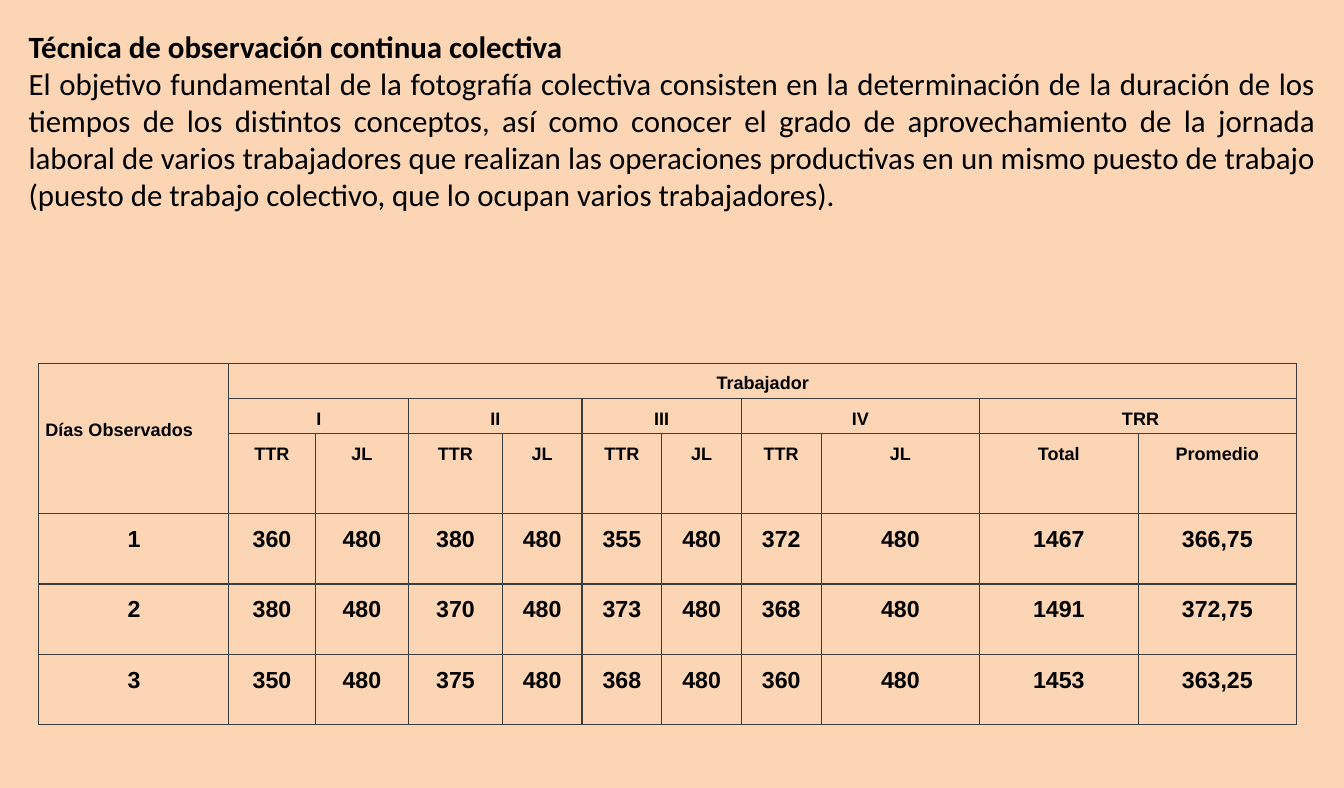
from dataclasses import dataclass

from lxml import etree
from pptx import Presentation
from pptx.dml.color import RGBColor
from pptx.enum.text import PP_ALIGN
from pptx.oxml.ns import qn
from pptx.util import Inches, Pt

CENTER, JUSTIFY = PP_ALIGN.CENTER, PP_ALIGN.JUSTIFY


@dataclass(frozen=True)
class Theme:
    background: RGBColor = RGBColor(0xFC, 0xD5, 0xB5)
    text: RGBColor = RGBColor(0, 0, 0)
    border: str = "3C3C3C"
    border_width: int = Pt(1)
    body_font: str = "Calibri"
    table_font: str = "Arial"
    body_size: int = 24
    header_size: int = 14
    value_size: int = 18


THEME = Theme()

TITLE = "Técnica de observación continua colectiva"
BODY = (
    "El objetivo fundamental de la fotografía colectiva consisten en la determinación "
    "de la duración de los tiempos de los distintos conceptos, así como conocer el grado "
    "de aprovechamiento de la jornada laboral de varios trabajadores que realizan las "
    "operaciones productivas en un mismo puesto de trabajo (puesto de trabajo colectivo, "
    "que lo ocupan varios trabajadores)."
)

COLUMN_WIDTHS = [2.05, 0.93, 1.01, 1.01] + [0.86] * 4 + [1.71] * 3
ROW_HEIGHTS = [0.38, 0.38, 0.86] + [0.76] * 3
GROUPS = ["I", "II", "III", "IV", " TRR"]
MEASURES = ["TTR", "JL"] * 4 + ["Total", "Promedio"]
DAYS = [
    ["1", "360", "480", "380", "480", "355", "480", "372", "480", "1467", "366,75"],
    ["2", "380", "480", "370", "480", "373", "480", "368", "480", "1491", "372,75"],
    ["3", "350", "480", "375", "480", "368", "480", "360", "480", "1453", "363,25"],
]


def add_run(p, text, font, size, bold):
    r = p.add_run()
    r.text = text
    r.font.name = font
    r.font.size = Pt(size)
    r.font.bold = bold
    r.font.color.rgb = THEME.text


def add_text(slide, left, top, width, height, paragraphs):
    box = slide.shapes.add_textbox(Inches(left), Inches(top), Inches(width), Inches(height))
    tf = box.text_frame
    tf.word_wrap = True
    for i, (text, bold) in enumerate(paragraphs):
        p = tf.add_paragraph() if i else tf.paragraphs[0]
        p.alignment = JUSTIFY
        add_run(p, text, THEME.body_font, THEME.body_size, bold)


def style_cell(cell):
    cell.margin_left = cell.margin_right = Inches(0.07)
    cell.margin_top = cell.margin_bottom = 0
    tc_pr = cell._tc.get_or_add_tcPr()
    for side in ("lnL", "lnR", "lnT", "lnB"):
        ln = etree.SubElement(tc_pr, qn(f"a:{side}"), w=str(THEME.border_width))
        fill = etree.SubElement(ln, qn("a:solidFill"))
        etree.SubElement(fill, qn("a:srgbClr"), val=THEME.border)
    cell.fill.background()


def write_cell(cell, text, size=THEME.header_size, align=CENTER):
    p = cell.text_frame.paragraphs[0]
    p.alignment = align
    p.line_spacing = 1.5
    p.space_before = p.space_after = Pt(6)
    add_run(p, text, THEME.table_font, size, True)


def add_grid(slide, left, top, widths, heights):
    frame = slide.shapes.add_table(
        len(heights), len(widths), Inches(left), Inches(top),
        Inches(sum(widths)), Inches(sum(heights)))
    table = frame.table
    table.first_row = table.horz_banding = False
    for column, width in zip(table.columns, widths):
        column.width = Inches(width)
    for row, height in zip(table.rows, heights):
        row.height = Inches(height)
        for cell in row.cells:
            style_cell(cell)
    return table


def fill_observations(table):
    # Merged headers
    days = table.cell(0, 0)
    days.merge(table.cell(2, 0))
    days.margin_top = Inches(0.5)
    write_cell(days, "Días Observados", align=JUSTIFY)
    worker = table.cell(0, 1)
    worker.merge(table.cell(0, len(MEASURES)))
    write_cell(worker, "Trabajador")
    for i, group in enumerate(GROUPS):
        cell = table.cell(1, 1 + 2 * i)
        cell.merge(table.cell(1, 2 + 2 * i))
        write_cell(cell, group)
    for col, measure in enumerate(MEASURES, 1):
        write_cell(table.cell(2, col), measure)

    # Values by day
    for row, values in enumerate(DAYS, 3):
        for col, value in enumerate(values):
            write_cell(table.cell(row, col), value, THEME.value_size)


def main():
    prs = Presentation()
    prs.slide_width, prs.slide_height = Inches(14.5), Inches(8.5)
    slide = prs.slides.add_slide(prs.slide_layouts[6])
    slide.background.fill.solid()
    slide.background.fill.fore_color.rgb = THEME.background

    # Introduction
    add_text(slide, 0.21, 0.25, 14.08, 3.33, [(TITLE, True), (BODY, False)])

    # Observation table
    fill_observations(add_grid(slide, 0.42, 3.92, COLUMN_WIDTHS, ROW_HEIGHTS))

    prs.save("out.pptx")


if __name__ == "__main__":
    main()
